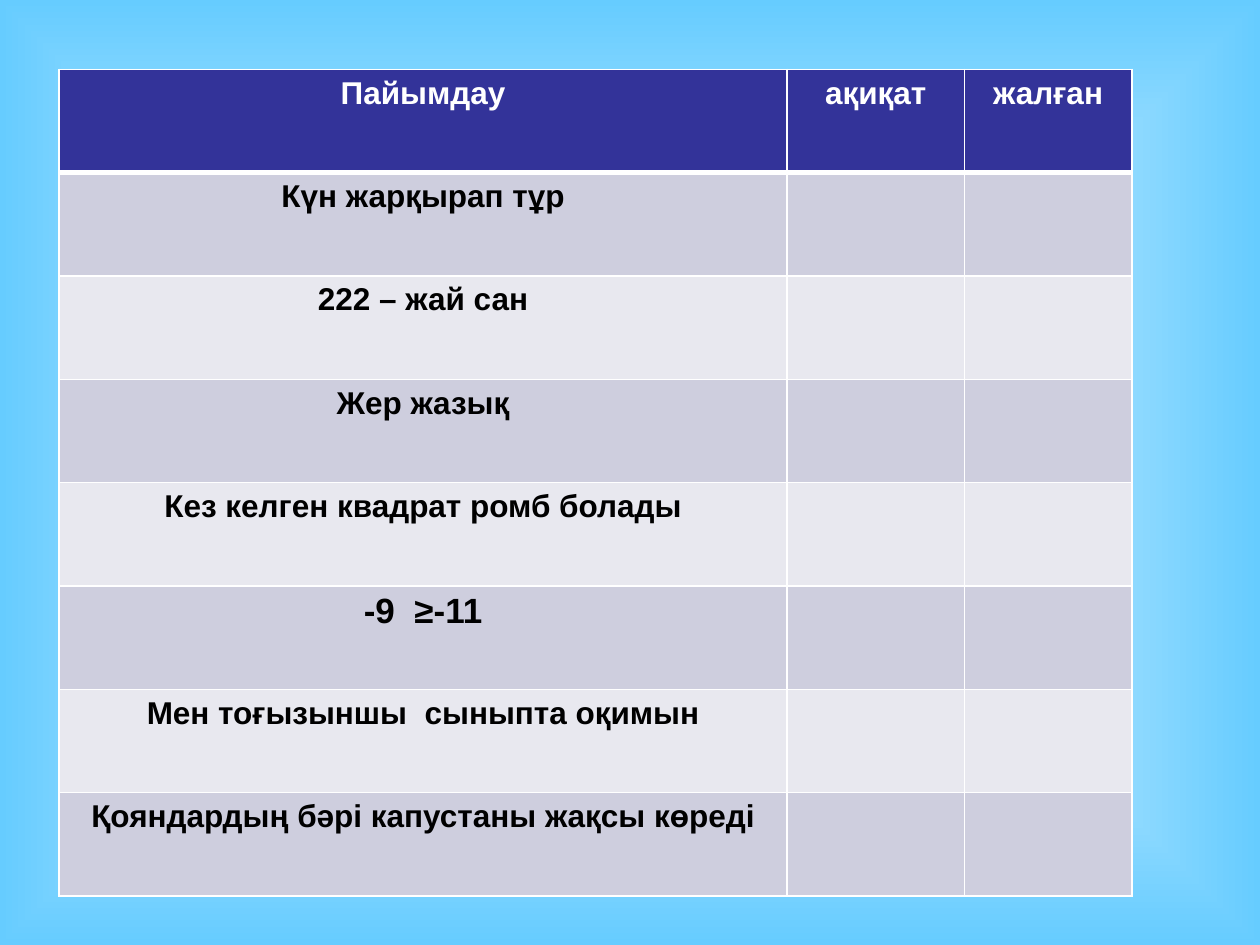
from lxml.etree import SubElement
from pptx import Presentation
from pptx.dml.color import RGBColor
from pptx.enum.text import PP_ALIGN
from pptx.oxml.ns import qn
from pptx.util import Pt

WHITE = RGBColor(0xFF, 0xFF, 0xFF)
BLACK = RGBColor(0, 0, 0)
SKY = RGBColor(0x66, 0xCC, 0xFF)
NAVY = RGBColor(0x33, 0x33, 0x99)
BAND_DARK = RGBColor(0xCE, 0xCE, 0xDE)
BAND_LIGHT = RGBColor(0xE8, 0xE8, 0xEF)

HEADER = ["Пайымдау", "ақиқат", "жалған"]
STATEMENTS = [
    "Күн жарқырап тұр",
    "222 – жай сан",
    "Жер жазық",
    "Кез келген квадрат ромб болады",
    "-9  ≥-11",
    "Мен тоғызыншы  сыныпта оқимын",
    "Қояндардың бәрі капустаны жақсы көреді",
]
FORMULA_ROW = 5


class SlideBuilder:
    font = "Arial"
    size = 18
    formula_size = 20

    def __init__(self, prs):
        self.s = prs.slides.add_slide(prs.slide_layouts[6])

    def background(self, inner, outer):
        fill = self.s.background.fill
        fill.gradient()
        for stop, color in zip(fill.gradient_stops, (inner, outer)):
            stop.color.rgb = color
        # Turn the linear gradient into a rectangular one around the centre
        grad = self.s.element.find(".//" + qn("a:gradFill"))
        grad.remove(grad.find(qn("a:lin")))
        shade = SubElement(grad, qn("a:path"), path="shape")
        SubElement(shade, qn("a:fillToRect"),
                   {side: "50000" for side in "ltrb"})

    def borders(self, cell, top, bottom):
        tc_pr = cell._tc.get_or_add_tcPr()
        for side, width in zip("LRTB", (1, 1, top, bottom)):
            ln = SubElement(tc_pr, qn(f"a:ln{side}"), w=str(Pt(width)))
            solid = SubElement(ln, qn("a:solidFill"))
            SubElement(solid, qn("a:srgbClr"), val=str(WHITE))

    def cell(self, cell, text, fill, color, size):
        cell.fill.solid()
        cell.fill.fore_color.rgb = fill
        p = cell.text_frame.paragraphs[0]
        p.text = text
        p.alignment = PP_ALIGN.CENTER
        p.font.name = self.font
        p.font.size = Pt(size)
        p.font.bold = True
        p.font.color.rgb = color

    def table(self, rows, left, top, col_widths, row_height):
        frame = self.s.shapes.add_table(
            len(rows), len(col_widths), Pt(left), Pt(top),
            Pt(sum(col_widths)), Pt(row_height * len(rows)))
        table = frame.table
        for col, width in zip(table.columns, col_widths):
            col.width = Pt(width)
        for i, texts in enumerate(rows):
            table.rows[i].height = Pt(row_height)
            fill = NAVY if i == 0 else BAND_DARK if i % 2 else BAND_LIGHT
            color = WHITE if i == 0 else BLACK
            size = self.formula_size if i == FORMULA_ROW else self.size
            for j, text in enumerate(texts):
                cell = table.cell(i, j)
                # Thick rule between the header and the statements
                self.borders(cell, 3 if i == 1 else 1, 3 if i == 0 else 1)
                self.cell(cell, text, fill, color, size)


def main():
    prs = Presentation()
    prs.slide_width, prs.slide_height = Pt(720), Pt(540)
    slide = SlideBuilder(prs)
    slide.background(WHITE, SKY)

    # True/false table with empty answer cells
    rows = [HEADER] + [[text, "", ""] for text in STATEMENTS]
    slide.table(rows, 33.8, 39.6, [416, 101.3, 95.8], 59.05)
    prs.save("out.pptx")


if __name__ == "__main__":
    main()
